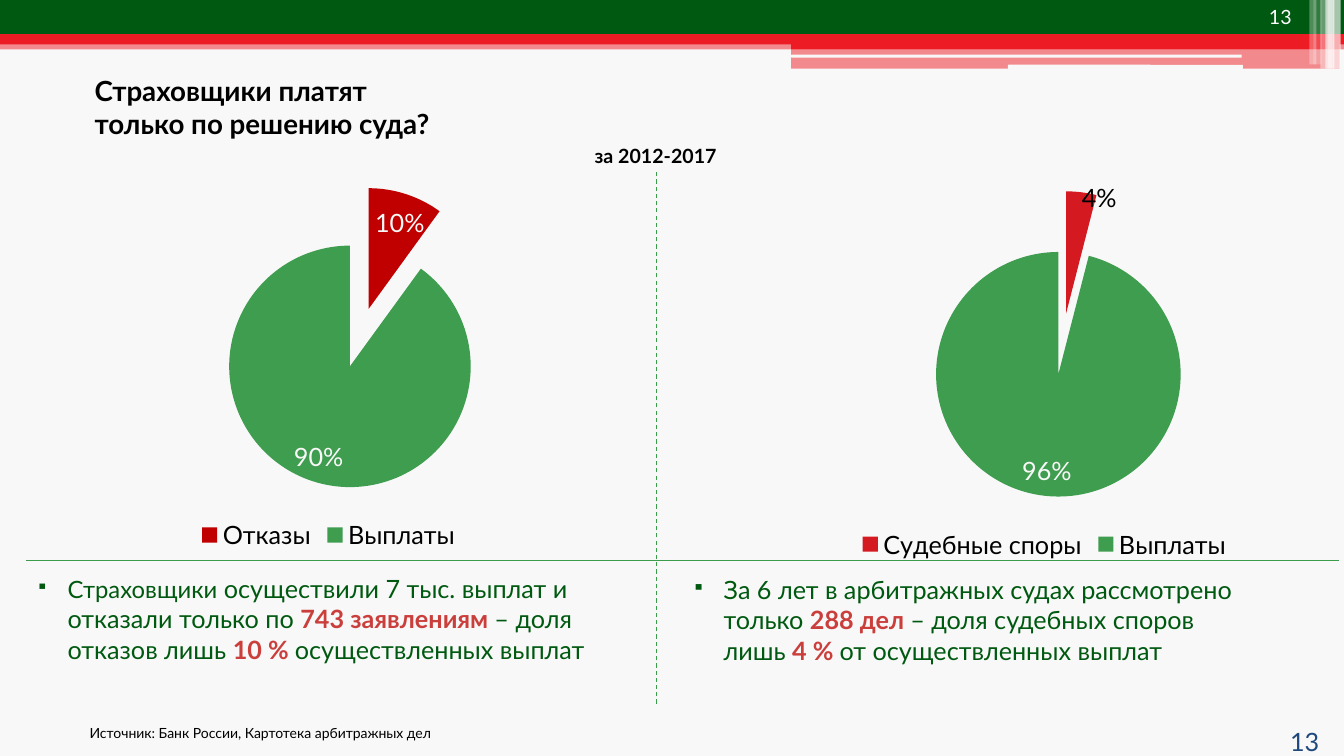
from lxml import etree
from pptx import Presentation
from pptx import util as u
from pptx.chart.data import CategoryChartData
from pptx.dml.color import RGBColor
from pptx.enum import chart as ch, dml, shapes, text
from pptx.oxml import parse_xml
from pptx.oxml.ns import nsdecls, qn

Pt = u.Pt
FONT = "Lato"
BACK = RGBColor(0xF8, 0xF8, 0xF8)
WHITE = RGBColor(0xFF, 0xFF, 0xFF)
BLACK = RGBColor(0, 0, 0)
DARK_GREEN = RGBColor(0x00, 0x59, 0x10)
PIE_GREEN = RGBColor(0x3F, 0x9D, 0x4F)
LINE_GREEN = RGBColor(0x3B, 0x9C, 0x4C)
RED = RGBColor(0xED, 0x1C, 0x24)
REFUSAL_RED = RGBColor(0xC0, 0, 0)
DISPUTE_RED = RGBColor(0xD5, 0x19, 0x20)
ACCENT = RGBColor(0xCA, 0x3F, 0x3C)
BLUE = RGBColor(0x1F, 0x49, 0x7D)

prs = Presentation()
prs.slide_width, prs.slide_height = Pt(960), Pt(540)
s = prs.slides.add_slide(prs.slide_layouts[6])
s.background.fill.solid()
s.background.fill.fore_color.rgb = BACK


def add_text(content, x, y, w, h, size=18, color=BLACK, bold=False,
             align=None, wrap=True, bullet=None, first_size=None):
    """Add a text box; every second piece of a list is accented."""
    tf = s.shapes.add_textbox(Pt(x), Pt(y), Pt(w), Pt(h)).text_frame
    tf.word_wrap = wrap
    p = tf.paragraphs[0]
    if bullet:
        pPr = p._p.get_or_add_pPr()
        pPr.set("marL", str(Pt(22.5)))
        pPr.set("indent", str(-Pt(22.5)))
        etree.SubElement(pPr, qn("a:buSzPct")).set("val", "70000")
        etree.SubElement(pPr, qn("a:buChar")).set("char", bullet)
        p.space_after = Pt(2)
    if align:
        p.alignment = align
    for i, piece in enumerate([content] if isinstance(content, str) else content):
        for j, line in enumerate(piece.split("\n")):
            if j:
                p.add_line_break()
            r = p.add_run()
            r.text = line
            r.font.name, r.font.size = FONT, Pt(size)
            r.font.bold = bold or i % 2 == 1
            r.font.color.rgb = ACCENT if i % 2 else color
    if first_size:
        first = p.runs[0]
        word, rest = first.text.split(" ", 1)
        first.text = " " + rest
        r = p.add_run()
        r.text = word
        r.font.name, r.font.size = FONT, Pt(first_size)
        r.font.color.rgb = color
        first._r.addprevious(r._r)


# Header bands and the light stripes at the right edge
RECT = shapes.MSO_SHAPE.RECTANGLE
ROUND = shapes.MSO_SHAPE.ROUNDED_RECTANGLE
for kind, x, y, w, h, color, alpha in [
    (RECT, 0, 28.8, 960, 6.5, RED, 50),
    (RECT, 0, 0, 960, 24.5, DARK_GREEN, 100),
    (RECT, 0, 24.5, 960, 7.2, RED, 100),
    (RECT, 565.2, 28, 391.7, 7.2, RED, 100),
    (RECT, 565.2, 34.8, 391.7, 14.2, RED, 50),
    (ROUND, 565.2, 39, 321.8, 2.2, BACK, 100),
    (ROUND, 720, 46.3, 167.8, 3, BACK, 100),
    (RECT, 951.8, 0, 5.8, 49, WHITE, 65),
    (RECT, 948.2, 0, 5, 49, WHITE, 65),
    (RECT, 946.8, 0, 5, 49, WHITE, 60),
    (RECT, 943.2, 0, 5, 49, WHITE, 40),
    (RECT, 938.2, 0, 5.8, 46, WHITE, 20),
    (RECT, 935.3, 0, 5, 46, WHITE, 30),
]:
    sp = s.shapes.add_shape(kind, Pt(x), Pt(y), Pt(w), Pt(h))
    sp.shadow.inherit = False
    sp.line.fill.background()
    sp.fill.solid()
    sp.fill.fore_color.rgb = color
    if alpha < 100:
        clr = sp._element.spPr.find(".//" + qn("a:srgbClr"))
        etree.SubElement(clr, qn("a:alpha")).set("val", str(alpha * 1000))

# Title, period, page numbers and source
add_text("13", 899.3, 0, 49, 20, size=14, color=WHITE)
add_text("Страховщики платят\nтолько по решению суда?", 60.5, 49, 879, 50,
         size=19.8, bold=True)
add_text("за 2012-2017", 366.5, 99.4, 203.8, 24.5, size=14, bold=True,
         align=text.PP_ALIGN.CENTER)
add_text("13", 914.4, 515.5, 45.4, 21, color=BLUE)
add_text("Источник: Банк России, Картотека арбитражных дел", 56.9, 514, 262.8, 19.4,
         size=10, wrap=False)

# Pie charts
for x, y, w, h, cats, vals, red, small_color, plot, shifts in [
    (-9.4, 116.6, 488.2, 280.1, ("Отказы", "Выплаты"), (10, 90), REFUSAL_RED,
     BACK, (0.25, 0.06, 0.59, 0.77), ((0.03, 0.02), (-0.03, -0.01))),
    (488.9, 119.5, 514.1, 283.7, ("Судебные споры", "Выплаты"), (4, 96), DISPUTE_RED,
     BLACK, (0.24, 0.06, 0.57, 0.77), ((0.05, -0.04), (-0.03, -0.01))),
]:
    data = CategoryChartData()
    data.categories = cats
    data.add_series("Series 1", vals)
    chart = s.shapes.add_chart(ch.XL_CHART_TYPE.PIE, Pt(x), Pt(y), Pt(w), Pt(h),
                               data).chart
    chart.has_title = False
    chart.font.name, chart.font.size = FONT, Pt(18)
    chart.font.color.rgb = BLACK
    chart.has_legend = True
    chart.legend.position = ch.XL_LEGEND_POSITION.BOTTOM
    chart.legend.include_in_layout = False
    pie = chart.plots[0]
    pie.vary_by_categories = True
    series = pie.series[0]
    labels = series.data_labels
    labels.show_percentage, labels.show_value = True, False
    labels.number_format, labels.number_format_is_linked = "0%", False
    labels.position = ch.XL_LABEL_POSITION.INSIDE_END
    # Slice colours and labels nudged into place
    for i, (color, label_color) in enumerate(((red, small_color), (PIE_GREEN, BACK))):
        fill = series.points[i].format.fill
        fill.solid()
        fill.fore_color.rgb = color
        label = series.points[i].data_label
        label.font.name, label.font.size = FONT, Pt(18)
        label.font.color.rgb = label_color
        label.position = ch.XL_LABEL_POSITION.INSIDE_END
        dLbl = labels._element.findall(qn("c:dLbl"))[i]
        for tag, on in (("c:showVal", "0"), ("c:showPercent", "1")):
            dLbl.find(qn(tag)).set("val", on)
        dLbl.find(qn("c:idx")).addnext(parse_xml(
            f'<c:layout {nsdecls("c")}><c:manualLayout><c:x val="{shifts[i][0]}"/>'
            f'<c:y val="{shifts[i][1]}"/></c:manualLayout></c:layout>'))
    # Slices pulled apart
    points = series._element.findall(qn("c:dPt"))
    for node in [points[0]] + [point.find(qn("c:spPr")) for point in points]:
        node.addprevious(parse_xml(f'<c:explosion {nsdecls("c")} val="25"/>'))
    # Fixed plot area
    area = chart._chartSpace.find(".//" + qn("c:plotArea"))
    for old in area.findall(qn("c:layout")):
        area.remove(old)
    sizes = "".join(f'<c:{n} val="{v}"/>' for n, v in zip("xywh", plot))
    area.insert(0, parse_xml(
        f'<c:layout {nsdecls("c")}><c:manualLayout><c:layoutTarget val="inner"/>'
        f'<c:xMode val="edge"/><c:yMode val="edge"/>{sizes}'
        '</c:manualLayout></c:layout>'))

# Conclusions under the charts
add_text(["Страховщики осуществили 7 тыс. выплат и отказали только по ",
          "743 заявлениям ", "– доля отказов лишь ", "10 % ",
          "осуществленных выплат"],
         18.7, 406, 430.6, 85, color=DARK_GREEN, bullet="▪", first_size=17)
add_text(["За 6 лет в арбитражных судах рассмотрено только ", "288 дел ",
          "– доля судебных споров\nлишь ", "4 % ", "от осуществленных выплат"],
         487.4, 406.8, 453.6, 72.7, color=DARK_GREEN, bullet="▪")

# Dividing lines
for x1, y1, x2, y2, dash in [
    (18.7, 400.3, 956.2, 400.3, None),
    (468.7, 502.6, 468.7, 123.1, dml.MSO_LINE.DASH),
]:
    line = s.shapes.add_connector(shapes.MSO_CONNECTOR.STRAIGHT,
                                  Pt(x1), Pt(y1), Pt(x2), Pt(y2))
    line.line.color.rgb = LINE_GREEN
    line.line.width = Pt(0.75)
    if dash:
        line.line.dash_style = dash
    etree.SubElement(line._element.spPr, qn("a:effectLst"))

prs.save("out.pptx")
